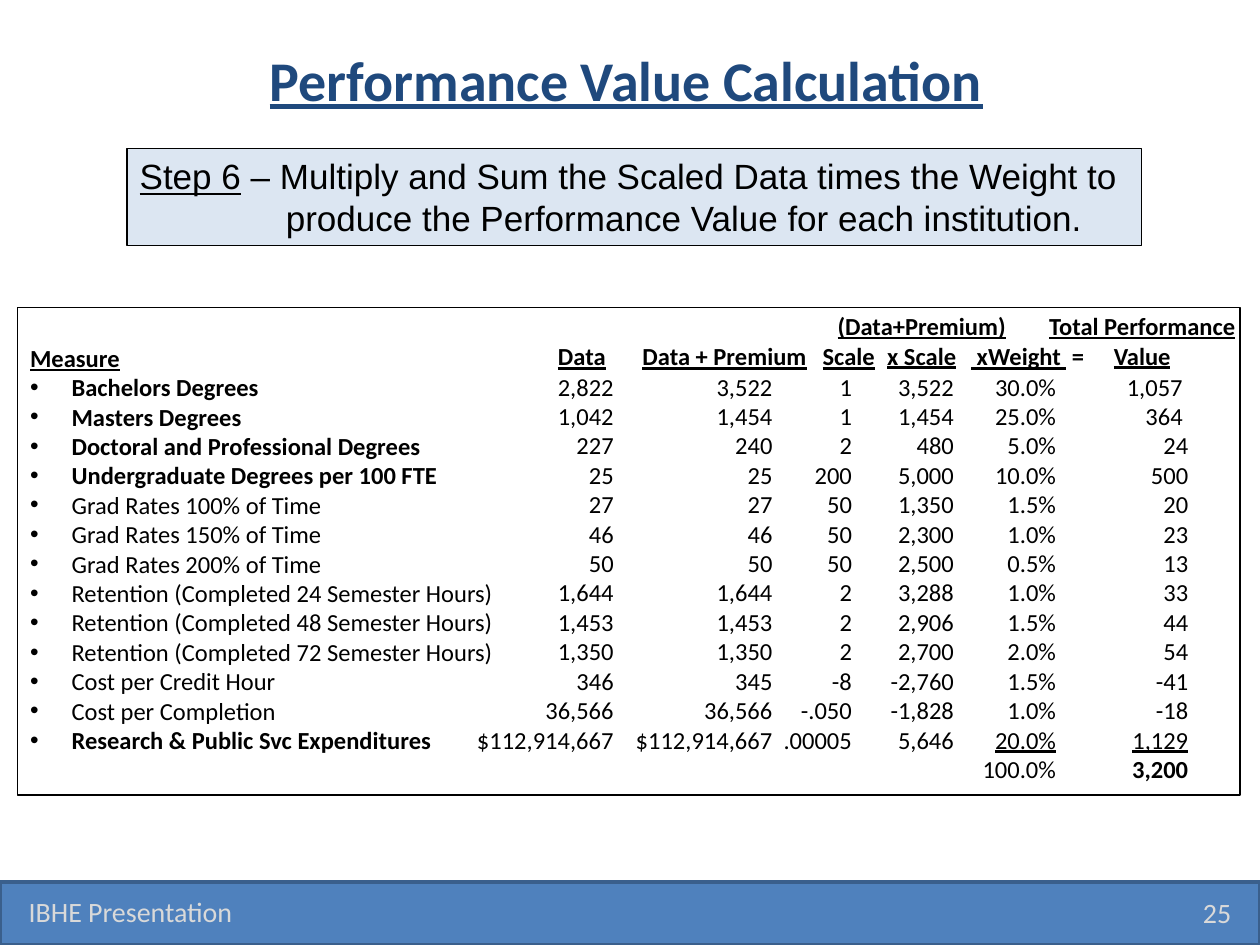
from dataclasses import dataclass

from lxml.etree import SubElement
from pptx import Presentation
from pptx.dml.color import RGBColor
from pptx.enum.shapes import MSO_SHAPE
from pptx.enum.text import MSO_ANCHOR, PP_ALIGN
from pptx.oxml.ns import qn
from pptx.util import Inches, Pt


@dataclass(frozen=True)
class Theme:
    """Colours, fonts and type sizes of the slide."""
    ink: str = "000000"
    title: str = "1F497D"
    bar: str = "4F81BD"
    bar_line: str = "3A5F8C"
    footer: str = "D9D9D9"
    step_fill: str = "DCE6F2"
    body_font: str = "Calibri"
    step_font: str = "Arial"
    title_size: int = 32
    step_size: int = 20
    footer_size: int = 16
    body_size: int = 14


THEME = Theme()
LEFT, CENTER, RIGHT = PP_ALIGN.LEFT, PP_ALIGN.CENTER, PP_ALIGN.RIGHT

MEASURES = [
    ("Bachelors Degrees", "2,822", "3,522", "1", "3,522", "30.0%", "1,057 "),
    ("Masters Degrees", "1,042", "1,454", "1", "1,454", "25.0%", "364 "),
    ("Doctoral and Professional Degrees", "227", "240", "2", "480", "5.0%", "24"),
    ("Undergraduate Degrees per 100 FTE", "25", "25", "200", "5,000", "10.0%", "500"),
    ("Grad Rates 100% of Time", "27", "27", "50", "1,350", "1.5%", "20"),
    ("Grad Rates 150% of Time", "46", "46", "50", "2,300", "1.0%", "23"),
    ("Grad Rates 200% of Time", "50", "50", "50", "2,500", "0.5%", "13"),
    ("Retention (Completed 24 Semester Hours)", "1,644", "1,644", "2", "3,288", "1.0%", "33"),
    ("Retention (Completed 48 Semester Hours)", "1,453", "1,453", "2", "2,906", "1.5%", "44"),
    ("Retention (Completed 72 Semester Hours)", "1,350", "1,350", "2", "2,700", "2.0%", "54"),
    ("Cost per Credit Hour", "346", "345", "-8", "-2,760", "1.5%", "-41"),
    ("Cost per Completion", "36,566", "36,566", "-.050", "-1,828", "1.0%", "-18"),
    ("Research & Public Svc Expenditures", "$112,914,667", "$112,914,667", ".00005",
     "5,646", "20.0%", "1,129"),
]
BOLD_ROWS = (0, 1, 2, 3, 12)
COLUMN_SPANS = [(3.67, 1.3), (4.93, 1.3), (5.77, 1.09), (6.96, 0.71), (7.69, 0.79), (8.77, 0.76)]
HEADERS = [
    (4.33, 2.66, 0.58, LEFT, ["Data"]),
    (5, 2.66, 1.51, LEFT, ["Data + Premium"]),
    (6.43, 2.66, 0.62, LEFT, ["Scale"]),
    (6.54, 2.42, 1.55, CENTER, ["(Data+Premium)", "x Scale"]),
    (8.22, 2.42, 1.69, CENTER, ["Total Performance", "Value"]),
]


def style(r, size, color=THEME.ink, font=THEME.body_font, bold=False, underline=False):
    """Format one run."""
    r.font.size, r.font.name = Pt(size), font
    r.font.bold, r.font.underline = bold, underline
    r.font.color.rgb = RGBColor.from_string(color)


def add_lines(tf, lines, align=LEFT, size=THEME.body_size, **look):
    """Write one paragraph per line and return the paragraphs."""
    tf.text = "\n".join(lines)
    for p in tf.paragraphs:
        p.alignment = align
        for r in p.runs:
            style(r, size, **look)
    return tf.paragraphs


def add_box(s, x, y, w, h, lines, wrap=False, anchor=MSO_ANCHOR.TOP, **look):
    """Add a text box and return its paragraphs."""
    tf = s.shapes.add_textbox(Inches(x), Inches(y), Inches(w), Inches(h)).text_frame
    tf.word_wrap, tf.vertical_anchor = wrap, anchor
    return add_lines(tf, lines, **look)


def add_panel(s, x, y, w, h, fill=None, line=THEME.ink, weight=1):
    """Add a bordered rectangle and return its text frame."""
    sp = s.shapes.add_shape(MSO_SHAPE.RECTANGLE, Inches(x), Inches(y), Inches(w), Inches(h))
    sp.shadow.inherit = False
    if fill:
        sp.fill.solid()
        sp.fill.fore_color.rgb = RGBColor.from_string(fill)
    else:
        sp.fill.background()
    sp.line.color.rgb = RGBColor.from_string(line)
    sp.line.width = Pt(weight)
    tf = sp.text_frame
    tf.word_wrap, tf.vertical_anchor = True, MSO_ANCHOR.TOP
    return tf


def indent(p, margin, bullet=False):
    """Indent a paragraph, hanging a bullet in the margin if asked."""
    pPr = p._p.get_or_add_pPr()
    pPr.set("marL", str(Inches(margin)))
    if bullet:
        pPr.set("indent", str(-Inches(margin)))
        SubElement(pPr, qn("a:buFont")).set("typeface", THEME.step_font)
        SubElement(pPr, qn("a:buChar")).set("char", "•")


def add_step(s):
    """Add the step description."""
    tf = add_panel(s, 1.01, 1.18, 8.05, 0.77, THEME.step_fill)
    look = dict(size=THEME.step_size, font=THEME.step_font)
    first, second = add_lines(
        tf, ["Step 6", "produce the Performance Value for each institution."], **look)
    first.runs[0].font.underline = True
    r = first.add_run()
    r.text = " – Multiply and Sum the Scaled Data times the Weight to"
    style(r, **look)
    indent(second, 1.16)


def add_measures(s, names):
    """Add the framed list of measures."""
    tf = add_panel(s, 0.14, 2.44, 9.7, 3.87)
    tf.margin_top = Inches(0.28)
    head, *items = add_lines(tf, ["Measure", *names])
    head.runs[0].font.bold = head.runs[0].font.underline = True
    for i, p in enumerate(items):
        indent(p, 0.33, bullet=True)
        p.runs[0].font.bold = i in BOLD_ROWS


def add_headers(s):
    """Add the column headings."""
    for x, y, w, align, lines in HEADERS:
        add_box(s, x, y, w, 0.34 if len(lines) == 1 else 0.57, lines,
                align=align, bold=True, underline=True)
    p, = add_box(s, 7.61, 2.66, 1.1, 0.34, [" xWeight "], bold=True, underline=True)
    r = p.add_run()
    r.text = " ="
    style(r, THEME.body_size, bold=True)


def add_columns(s, columns):
    """Add the figures, with totals under weight and value."""
    totals = [None] * 4 + ["100.0%", "3,200"]
    for (x, w), figures, total in zip(COLUMN_SPANS, columns, totals):
        lines = [*figures, total] if total else figures
        ps = add_box(s, x, 2.9, w, 3.4 if total else 3.16, lines, align=RIGHT)
        if total:
            ps[-2].runs[0].font.underline = True
    ps[-1].runs[0].font.bold = True


def add_footer(s):
    """Add the footer bar with its label and page number."""
    add_panel(s, 0, 7, 10, 0.5, THEME.bar, THEME.bar_line, 2)
    for x, y, w, text, align in [(0.13, 7.03, 3.17, "IBHE Presentation", LEFT),
                                 (9.38, 7.04, 0.49, "25", RIGHT)]:
        add_box(s, x, y, w, 0.4, [text], wrap=True, anchor=MSO_ANCHOR.MIDDLE,
                align=align, size=THEME.footer_size, color=THEME.footer)


def main():
    """Build and save the slide."""
    prs = Presentation()
    prs.slide_width, prs.slide_height = Inches(10), Inches(7.5)
    s = prs.slides.add_slide(prs.slide_layouts[6])
    names, *columns = zip(*MEASURES)
    add_footer(s)
    add_box(s, 0.47, 0, 9, 1.25, ["Performance Value Calculation"], wrap=True,
            anchor=MSO_ANCHOR.MIDDLE, align=CENTER, size=THEME.title_size,
            color=THEME.title, bold=True, underline=True)
    add_step(s)
    add_measures(s, names)
    add_columns(s, columns)
    add_headers(s)
    prs.save("out.pptx")


if __name__ == "__main__":
    main()
